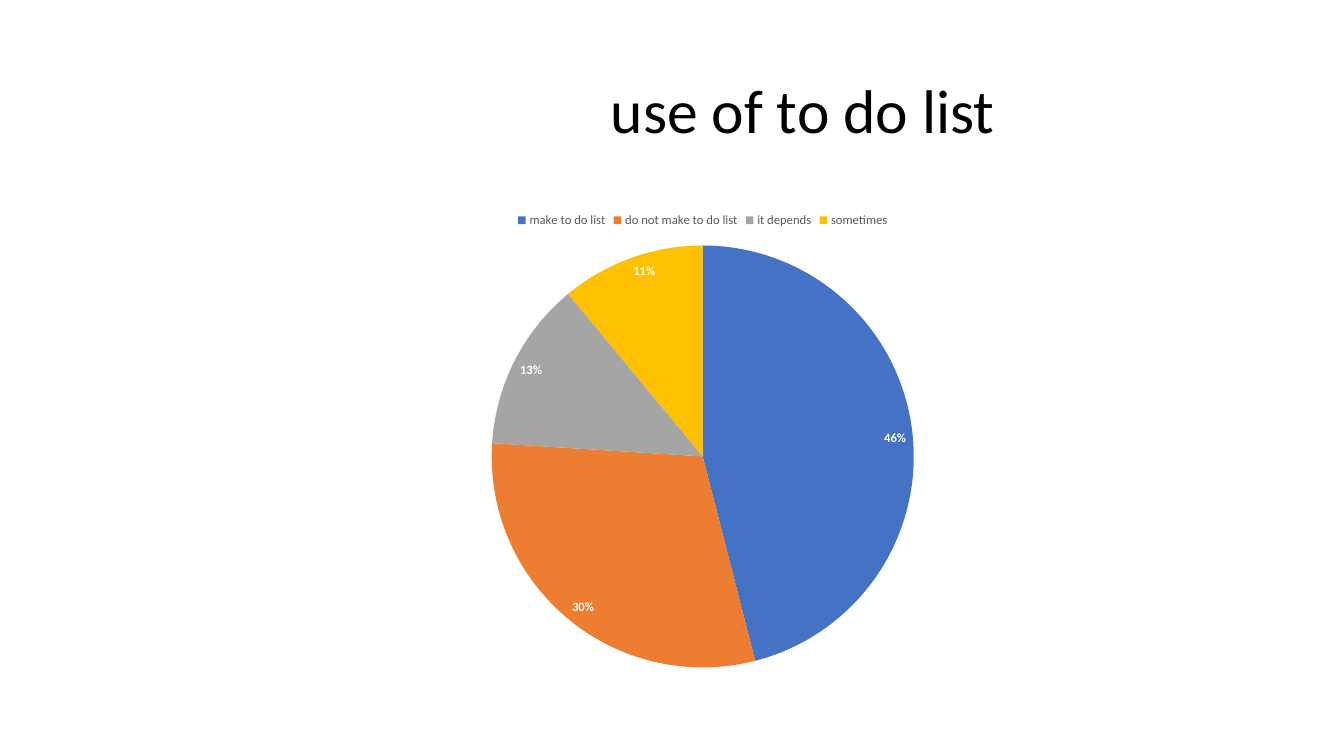
from pptx import Presentation, util as u
from pptx.chart.data import CategoryChartData
from pptx.dml.color import RGBColor
from pptx.enum import chart as ch, text

THEME = {
    "font": "Calibri",
    "title": (44, "000000"),
    "legend": (9, "595959"),
    "label": (9, "FFFFFF"),
}
ANSWERS = [
    ("make to do list", 46, "4472C4"),
    ("do not make to do list", 30, "ED7D31"),
    ("it depends", 13, "A5A5A5"),
    ("sometimes", 11, "FFC000"),
]


def style(font, role):
    size, colour = THEME[role]
    font.name = THEME["font"]
    font.size = u.Pt(size)
    font.color.rgb = RGBColor.from_string(colour)


prs = Presentation()
prs.slide_width, prs.slide_height = u.Inches(13.33), u.Inches(7.5)
slide = prs.slides.add_slide(prs.slide_layouts[6])

# Title, starting right of the slide's middle
title = slide.shapes.add_textbox(
    u.Inches(5.96), u.Inches(0.4), u.Inches(6.46), u.Inches(1.45)).text_frame
title.word_wrap = True
title.vertical_anchor = text.MSO_ANCHOR.MIDDLE
title.text = "use of to do list"
title.paragraphs[0].line_spacing = 0.9
style(title.paragraphs[0].runs[0].font, "title")

# Pie of the answers
answers = CategoryChartData()
answers.categories = [name for name, _, _ in ANSWERS]
answers.add_series("Series 1", [share for _, share, _ in ANSWERS])
pie = slide.shapes.add_chart(
    ch.XL_CHART_TYPE.PIE, u.Inches(0.92), u.Inches(2),
    u.Inches(12.1), u.Inches(4.76), answers).chart
pie.has_title = False
pie.font.name = THEME["font"]
pie.font.size = u.Pt(10)

pie.has_legend = True
pie.legend.position = ch.XL_LEGEND_POSITION.TOP
pie.legend.include_in_layout = False
style(pie.legend.font, "legend")

plot = pie.plots[0]
plot.vary_by_categories = True
slices = plot.series[0]
for i, (_, _, colour) in enumerate(ANSWERS):
    fill = slices.points[i].format.fill
    fill.solid()
    fill.fore_color.rgb = RGBColor.from_string(colour)

labels = slices.data_labels
labels.show_percentage = True
labels.show_value = False
labels.number_format = "0%"
labels.number_format_is_linked = False
labels.position = ch.XL_LABEL_POSITION.INSIDE_END
style(labels.font, "label")
labels.font.bold = True

prs.save("out.pptx")
